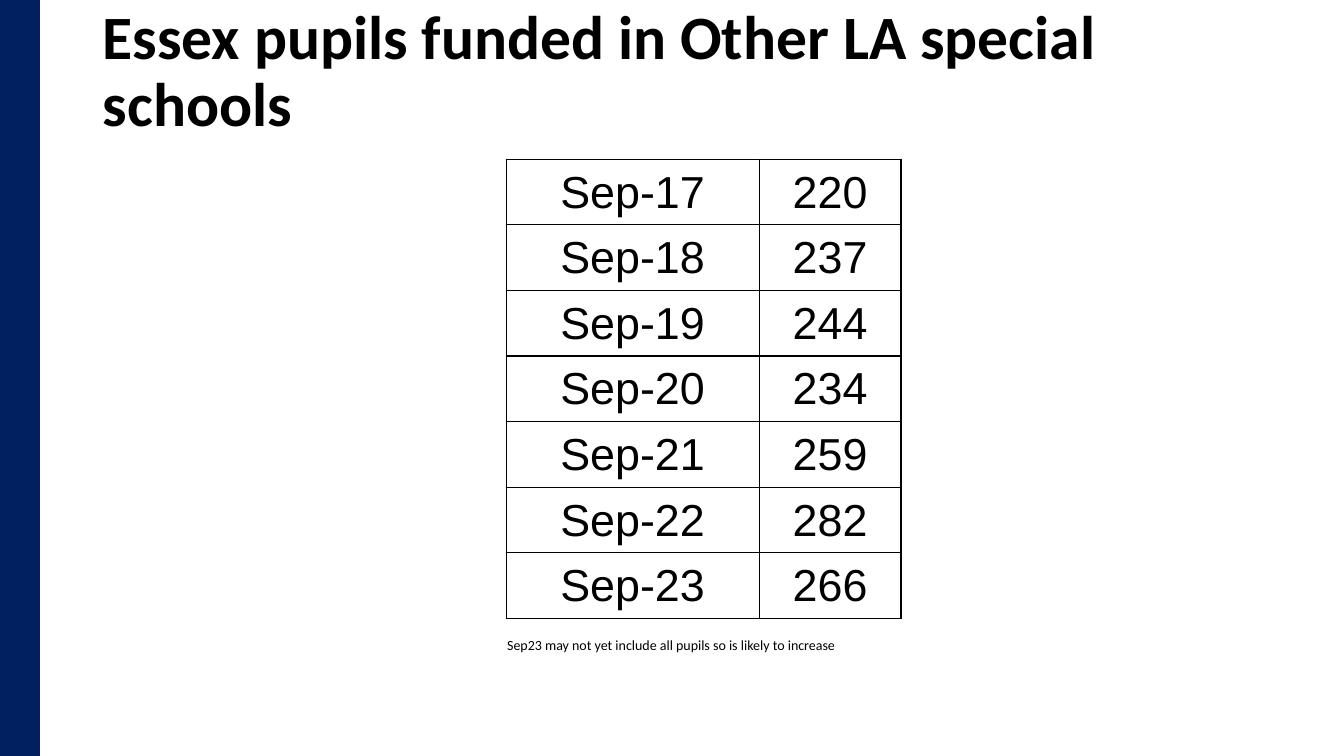
from pptx import Presentation
from pptx.dml.color import RGBColor
from pptx.enum.shapes import MSO_SHAPE as Shape
from pptx.enum.text import MSO_ANCHOR as Anchor, PP_ALIGN as Align
from pptx.oxml import parse_xml
from pptx.oxml.ns import nsdecls
from pptx.util import Inches, Pt

WHITE = RGBColor(0xFF, 0xFF, 0xFF)
BLACK = RGBColor(0x00, 0x00, 0x00)
NAVY = RGBColor(0x00, 0x20, 0x60)

PUPILS = {
    "Sep-17": 220,
    "Sep-18": 237,
    "Sep-19": 244,
    "Sep-20": 234,
    "Sep-21": 259,
    "Sep-22": 282,
    "Sep-23": 266,
}
NOTE = "Sep23 may not yet include all pupils so is likely to increase"


class SlideBuilder:
    """Places styled elements on a grid of 100 columns by 100 rows."""

    text_font = "Calibri"
    figure_font = "Arial"

    def __init__(self, deck):
        self.column = deck.slide_width / 100
        self.row = deck.slide_height / 100
        self.slide = deck.slides.add_slide(deck.slide_layouts.get_by_name("Title Only"))
        fill = self.slide.background.fill
        fill.solid()
        fill.fore_color.rgb = WHITE

    def area(self, left, top, width, height):
        """Turn grid columns and rows into slide lengths."""
        return (round(left * self.column), round(top * self.row),
                round(width * self.column), round(height * self.row))

    def style(self, para, font, size, align, bold=False):
        para.alignment = align
        para.font.name = font
        para.font.size = Pt(size)
        para.font.bold = bold
        para.font.color.rgb = BLACK

    def title(self, text, *place):
        box = self.slide.shapes.title
        box.left, box.top, box.width, box.height = self.area(*place)
        frame = box.text_frame
        frame.text = text
        frame.vertical_anchor = Anchor.MIDDLE
        para = frame.paragraphs[0]
        para.line_spacing = 0.9
        self.style(para, self.text_font, 44, Align.LEFT, bold=True)

    def bar(self, *place):
        bar = self.slide.shapes.add_shape(Shape.RECTANGLE, *self.area(*place))
        bar.shadow.inherit = False
        bar.fill.solid()
        bar.fill.fore_color.rgb = NAVY
        bar.line.color.rgb = NAVY
        bar.line.width = Pt(1)

    def cell(self, cell, text, font, size, align, anchor, sides="LRTB"):
        """Fill one cell and rule only the named sides."""
        cell.text = str(text)
        cell.vertical_anchor = anchor
        cell.margin_left = cell.margin_right = cell.margin_top = Inches(0.01)
        cell.margin_bottom = 0
        self.style(cell.text_frame.paragraphs[0], font, size, align)
        self.borders(cell, sides)
        cell.fill.background()

    def borders(self, cell, sides):
        properties = cell._tc.get_or_add_tcPr()
        for side in "LRTB":
            paint = (f'<a:solidFill><a:srgbClr val="{BLACK}"/></a:solidFill>'
                     if side in sides else "<a:noFill/>")
            properties.append(parse_xml(
                f'<a:ln{side} {nsdecls("a")} w="{Pt(1)}">{paint}</a:ln{side}>'))

    def table(self, figures, note, left, top, widths, row_height, note_height):
        """Draw one row per figure, then a note across both columns."""
        count = len(figures)
        place = self.area(left, top, sum(widths), count * row_height + note_height)
        table = self.slide.shapes.add_table(count + 1, len(widths), *place).table
        table.first_row = table.horz_banding = False
        for column, width in zip(table.columns, widths):
            column.width = round(width * self.column)
        for row in table.rows:
            row.height = round(row_height * self.row)
        table.rows[count].height = round(note_height * self.row)

        for index, record in enumerate(figures.items()):
            for column, value in enumerate(record):
                self.cell(table.cell(index, column), value, self.figure_font, 32,
                          Align.CENTER, Anchor.MIDDLE)
        first, last = table.cell(count, 0), table.cell(count, 1)
        first.merge(last)
        self.cell(first, note, self.text_font, 10, Align.LEFT, Anchor.BOTTOM, "T")
        self.borders(last, "T")


def main():
    deck = Presentation()
    deck.slide_width = Inches(13.33)
    deck.slide_height = Inches(7.5)
    page = SlideBuilder(deck)
    page.title("Essex pupils funded in Other LA special schools", 6.9, 0, 86.25, 19.33)
    page.table(PUPILS, NOTE, left=37.66, top=21.07, widths=(18.83, 10.55),
               row_height=8.68, note_height=4.67)
    page.bar(0, 0, 2.95, 100)
    deck.save("out.pptx")


if __name__ == "__main__":
    main()
